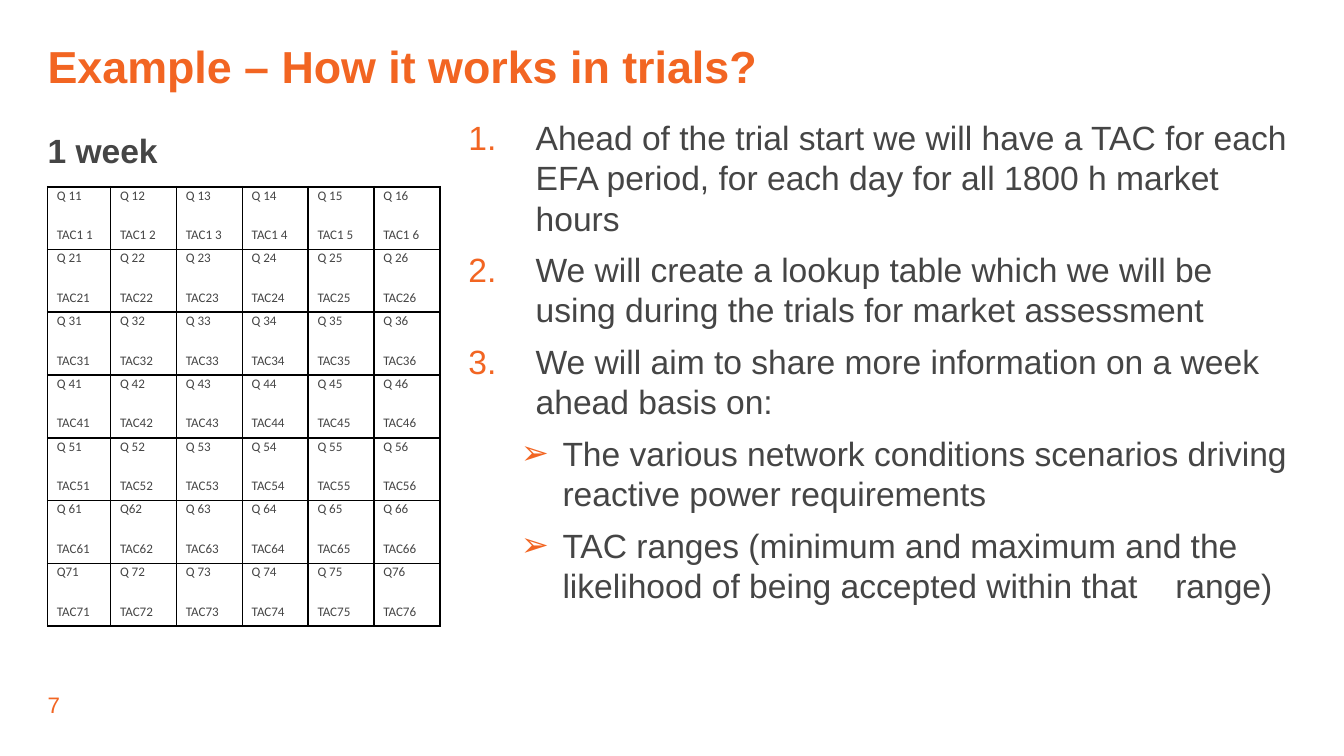
from dataclasses import dataclass

from lxml.etree import SubElement
from pptx import Presentation
from pptx.dml.color import RGBColor
from pptx.enum.text import MSO_ANCHOR, PP_ALIGN
from pptx.oxml.ns import qn
from pptx.util import Inches, Pt

SLIDE_WIDTH = Inches(10)
SLIDE_HEIGHT = SLIDE_WIDTH * 9 // 16
COLORS = {"accent": "F26522", "text": "454545", "border": "000000"}
WEEK_ROWS, WEEK_COLUMNS = 7, 6
UNSPACED_LABELS = {"62", "71", "76"}
TAB_SIZE = Inches(0.91)


@dataclass(frozen=True)
class Area:
    """A rectangle in percent of the slide's width and height."""
    left: float
    top: float
    width: float
    height: float

    def lengths(self) -> tuple[int, int, int, int]:
        return (int(SLIDE_WIDTH * self.left / 100), int(SLIDE_HEIGHT * self.top / 100),
                int(SLIDE_WIDTH * self.width / 100), int(SLIDE_HEIGHT * self.height / 100))


@dataclass(frozen=True)
class Style:
    size: float
    color: str = "text"
    bold: bool = False
    name: str = "Arial"


@dataclass(frozen=True)
class ListLevel:
    level: int
    margin: float
    indent: float
    bullet: str
    attributes: dict


@dataclass(frozen=True)
class ListItem:
    kind: ListLevel
    text: str


NUMBERED = ListLevel(2, 0.7, -0.5, "a:buAutoNum", {"type": "arabicPeriod"})
ARROWED = ListLevel(4, 0.9, -0.31, "a:buChar", {"char": "➢"})

TITLE_AREA = Area(3.54, 6.5, 92.9, 5.69)
WEEK_AREA = Area(3.54, 17.24, 9, 5.33)
TABLE_AREA = Area(3.54, 24.71, 29.1, 58.13)
STEPS_AREA = Area(32.86, 15.47, 63.6, 78.04)
NUMBER_AREA = Area(3.54, 91.38, 9.1, 3.56)

STEPS = [
    ListItem(NUMBERED, "Ahead of the trial start we will have a TAC for each EFA period, "
                       "for each day for all 1800 h market hours"),
    ListItem(NUMBERED, "We will create a lookup table which we will be using during "
                       "the trials for market assessment"),
    ListItem(NUMBERED, "We will aim to share more information on a week ahead basis on:"),
    ListItem(ARROWED, "The various network conditions scenarios driving reactive power "
                      "requirements"),
    ListItem(ARROWED, "TAC ranges (minimum and maximum and the \tlikelihood of being "
                      "accepted within that \trange)"),
]


def set_values(target, values: dict) -> None:
    for name, value in values.items():
        setattr(target, name, value)


def clear_margins(frame) -> None:
    set_values(frame, {f"margin_{side}": 0 for side in ("left", "top", "right", "bottom")})


def write_paragraph(para, text: str, style: Style, **spacing) -> None:
    span = para.add_run()
    span.text = text
    set_values(para, spacing)
    set_values(span.font, {"size": Pt(style.size), "bold": style.bold, "name": style.name})
    span.font.color.rgb = RGBColor.from_string(COLORS[style.color])


def add_text_frame(slide, area: Area, wrap: bool = True):
    frame = slide.shapes.add_textbox(*area.lengths()).text_frame
    clear_margins(frame)
    frame.word_wrap = wrap
    return frame


def add_color(parent, color: str) -> None:
    SubElement(parent, qn("a:srgbClr"), val=COLORS[color])


def set_bullet(para, kind: ListLevel) -> None:
    properties = para._p.get_or_add_pPr()
    bullet_lengths = {"marL": Inches(kind.margin), "indent": Inches(kind.indent),
                      "defTabSz": TAB_SIZE}
    for name, length in bullet_lengths.items():
        properties.set(name, str(int(length)))
    add_color(SubElement(properties, qn("a:buClr")), "accent")
    SubElement(properties, qn("a:buFont"), typeface="Arial")
    SubElement(properties, qn(kind.bullet), **kind.attributes)


def fill_title(slide) -> None:
    title = slide.shapes.title
    set_values(title, dict(zip(("left", "top", "width", "height"), TITLE_AREA.lengths())))
    frame = title.text_frame
    clear_margins(frame)
    set_values(frame, {"word_wrap": True, "vertical_anchor": MSO_ANCHOR.BOTTOM})
    write_paragraph(frame.paragraphs[0], "Example – How it works in trials?",
                    Style(24, "accent", bold=True), line_spacing=0.8,
                    alignment=PP_ALIGN.LEFT)


def add_steps(slide) -> None:
    frame = add_text_frame(slide, STEPS_AREA)
    for index, item in enumerate(STEPS):
        para = frame.add_paragraph() if index else frame.paragraphs[0]
        set_bullet(para, item.kind)
        write_paragraph(para, item.text, Style(18), level=item.kind.level,
                        space_after=Pt(6))


def cell_labels(row: int, column: int) -> tuple[str, str]:
    code = f"{row}{column}"
    quantity = f"Q{code}" if code in UNSPACED_LABELS else f"Q {code}"
    price = f"TAC{row} {column}" if row == 1 else f"TAC{code}"
    return quantity, price


def format_cell(cell) -> None:
    set_values(cell, {"margin_left": Inches(0.07), "margin_right": Inches(0.07),
                      "margin_top": 0, "margin_bottom": 0})
    properties = cell._tc.get_or_add_tcPr()
    for side in ("lnL", "lnR", "lnT", "lnB"):
        line = SubElement(properties, qn(f"a:{side}"), w=str(int(Pt(1))))
        add_color(SubElement(line, qn("a:solidFill")), "border")
    cell.fill.background()


def add_week_table(slide) -> None:
    table = slide.shapes.add_table(WEEK_ROWS, WEEK_COLUMNS, *TABLE_AREA.lengths()).table
    set_values(table, {"first_row": False, "horz_banding": False})
    for index, column in enumerate(table.columns):
        column.width = Inches(0.49 if index else 0.47)
    for row in range(WEEK_ROWS):
        for column in range(WEEK_COLUMNS):
            cell = table.cell(row, column)
            format_cell(cell)
            quantity, price = cell_labels(row + 1, column + 1)
            frame, style = cell.text_frame, Style(7, name="Calibri")
            write_paragraph(frame.paragraphs[0], quantity, style, line_spacing=1.07)
            write_paragraph(frame.add_paragraph(), price, style,
                            line_spacing=1.07, space_before=Pt(12))


def main() -> None:
    deck = Presentation()
    set_values(deck, {"slide_width": SLIDE_WIDTH, "slide_height": SLIDE_HEIGHT})
    page = deck.slides.add_slide(deck.slide_layouts.get_by_name("Title Only"))
    number = add_text_frame(page, NUMBER_AREA)
    write_paragraph(number.paragraphs[0], "7", Style(12, "accent"))
    fill_title(page)
    add_steps(page)
    week = add_text_frame(page, WEEK_AREA, wrap=False)
    write_paragraph(week.paragraphs[0], "1 week", Style(18, bold=True))
    add_week_table(page)
    deck.save("out.pptx")


if __name__ == "__main__":
    main()
